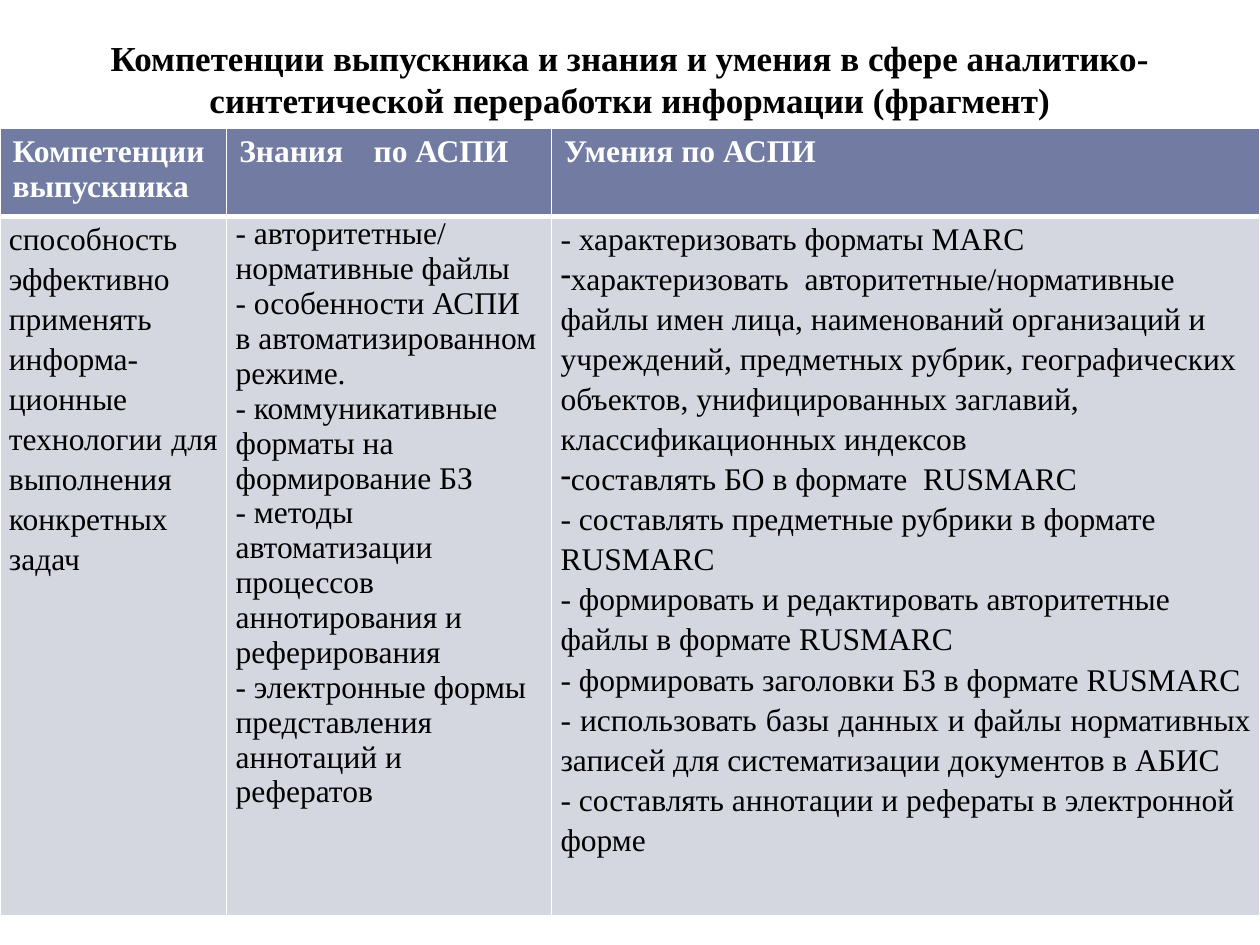
from lxml import etree
from pptx import Presentation
from pptx.dml.color import RGBColor
from pptx.enum import text
from pptx.oxml import ns
from pptx.util import Cm, Pt

WHITE = RGBColor(0xFF, 0xFF, 0xFF)
BLACK = RGBColor(0, 0, 0)
HEADER_FILL = RGBColor(0x72, 0x7C, 0xA3)
BODY_FILL = RGBColor(0xD5, 0xD7, 0xE0)
FONT = "Times New Roman"
JUSTIFY = text.PP_ALIGN.JUSTIFY

TITLE = ("Компетенции выпускника и знания и умения в сфере "
         "аналитико-синтетической переработки информации (фрагмент)")
HEADERS = ["Компетенции выпускника", "Знания\tпо АСПИ", "Умения по АСПИ"]
COMPETENCE = ["способность эффективно применять информа-ционные технологии "
              "для выполнения конкретных задач"]
KNOWLEDGE = [
    "- авторитетные/ нормативные файлы",
    "- особенности АСПИ в автоматизированном режиме.",
    "- коммуникативные форматы на формирование БЗ",
    "- методы автоматизации процессов аннотирования и реферирования",
    "- электронные формы представления аннотаций и рефератов",
]
SKILLS = [
    "- характеризовать форматы MARC",
    "характеризовать  авторитетные/нормативные файлы имен лица, "
    "наименований организаций и учреждений, предметных рубрик, "
    "географических объектов, унифицированных заглавий, "
    "классификационных индексов",
    "составлять БО в формате  RUSMARC",
    "- составлять предметные рубрики в формате RUSMARC",
    "- формировать и редактировать авторитетные файлы в формате RUSMARC",
    "- формировать заголовки БЗ в формате RUSMARC",
    "- использовать базы данных и файлы нормативных записей для "
    "систематизации документов в АБИС",
    "- составлять аннотации и рефераты в электронной форме",
]
BULLETED_SKILLS = (1, 2)
JUSTIFIED_SKILL = 6


def format_text(paragraph, size, color, bold=False):
    for run in paragraph.runs:
        run.font.name = FONT
        run.font.size = Pt(size)
        run.font.bold = bold
        run.font.color.rgb = color


def add_title(slide):
    box = slide.shapes.add_textbox(Cm(1.27), Cm(0.76), Cm(22.86), Cm(1.63))
    frame = box.text_frame
    frame.word_wrap = True
    frame.vertical_anchor = text.MSO_ANCHOR.MIDDLE
    frame.text = TITLE
    paragraph = frame.paragraphs[0]
    paragraph.alignment = text.PP_ALIGN.CENTER
    format_text(paragraph, 20, BLACK, bold=True)


def set_borders(cell, bottom=1, top=1):
    properties = cell._tc.get_or_add_tcPr()
    widths = {"a:lnL": 1, "a:lnR": 1, "a:lnT": top, "a:lnB": bottom}
    for index, (tag, width) in enumerate(widths.items()):
        line = etree.Element(ns.qn(tag), w=str(Pt(width)))
        fill = etree.SubElement(line, ns.qn("a:solidFill"))
        etree.SubElement(fill, ns.qn("a:srgbClr"), val=str(WHITE))
        properties.insert(index, line)


def set_bullet(paragraph):
    properties = paragraph._p.get_or_add_pPr()
    properties.set("marL", "0")
    properties.set("indent", "0")
    etree.SubElement(properties, ns.qn("a:buChar"), char="-")


def set_tab(paragraph, position):
    properties = paragraph._p.get_or_add_pPr()
    tabs = etree.SubElement(properties, ns.qn("a:tabLst"))
    etree.SubElement(tabs, ns.qn("a:tab"), pos=str(position), algn="l")


def fill_cell(cell, fill, color, lines, bold=False, spacing=None):
    cell.fill.solid()
    cell.fill.fore_color.rgb = fill
    cell.text_frame.text = "\n".join(lines)
    for paragraph in cell.text_frame.paragraphs:
        if spacing:
            paragraph.line_spacing = spacing
        format_text(paragraph, 18, color, bold)


def add_table(slide):
    widths = [Cm(4.57), Cm(6.55), Cm(14.28)]
    heights = [Cm(1.78), Cm(14.1)]
    table = slide.shapes.add_table(
        2, 3, 0, Cm(2.59), sum(widths), sum(heights)).table
    for column, width in zip(table.columns, widths):
        column.width = width
    for row, height in zip(table.rows, heights):
        row.height = height

    for index, header in enumerate(HEADERS):
        cell = table.cell(0, index)
        fill_cell(cell, HEADER_FILL, WHITE, [header], bold=True)
        set_borders(cell, bottom=3)
    set_tab(table.cell(0, 1).text_frame.paragraphs[0], Cm(2.71))

    bodies = [(COMPETENCE, 1.15), (KNOWLEDGE, None), (SKILLS, 1.15)]
    for index, (lines, spacing) in enumerate(bodies):
        cell = table.cell(1, index)
        cell.margin_left = cell.margin_right = Cm(0.18)
        cell.margin_top = cell.margin_bottom = 0
        fill_cell(cell, BODY_FILL, BLACK, lines, spacing=spacing)
        set_borders(cell, top=3)

    table.cell(1, 0).text_frame.paragraphs[0].alignment = JUSTIFY
    skills = table.cell(1, 2).text_frame.paragraphs
    skills[JUSTIFIED_SKILL].alignment = JUSTIFY
    for index in BULLETED_SKILLS:
        set_bullet(skills[index])


def main():
    presentation = Presentation()
    presentation.slide_width = Cm(25.4)
    presentation.slide_height = Cm(19.05)
    slide = presentation.slides.add_slide(presentation.slide_layouts[6])
    add_title(slide)
    add_table(slide)
    presentation.save("out.pptx")


if __name__ == "__main__":
    main()
